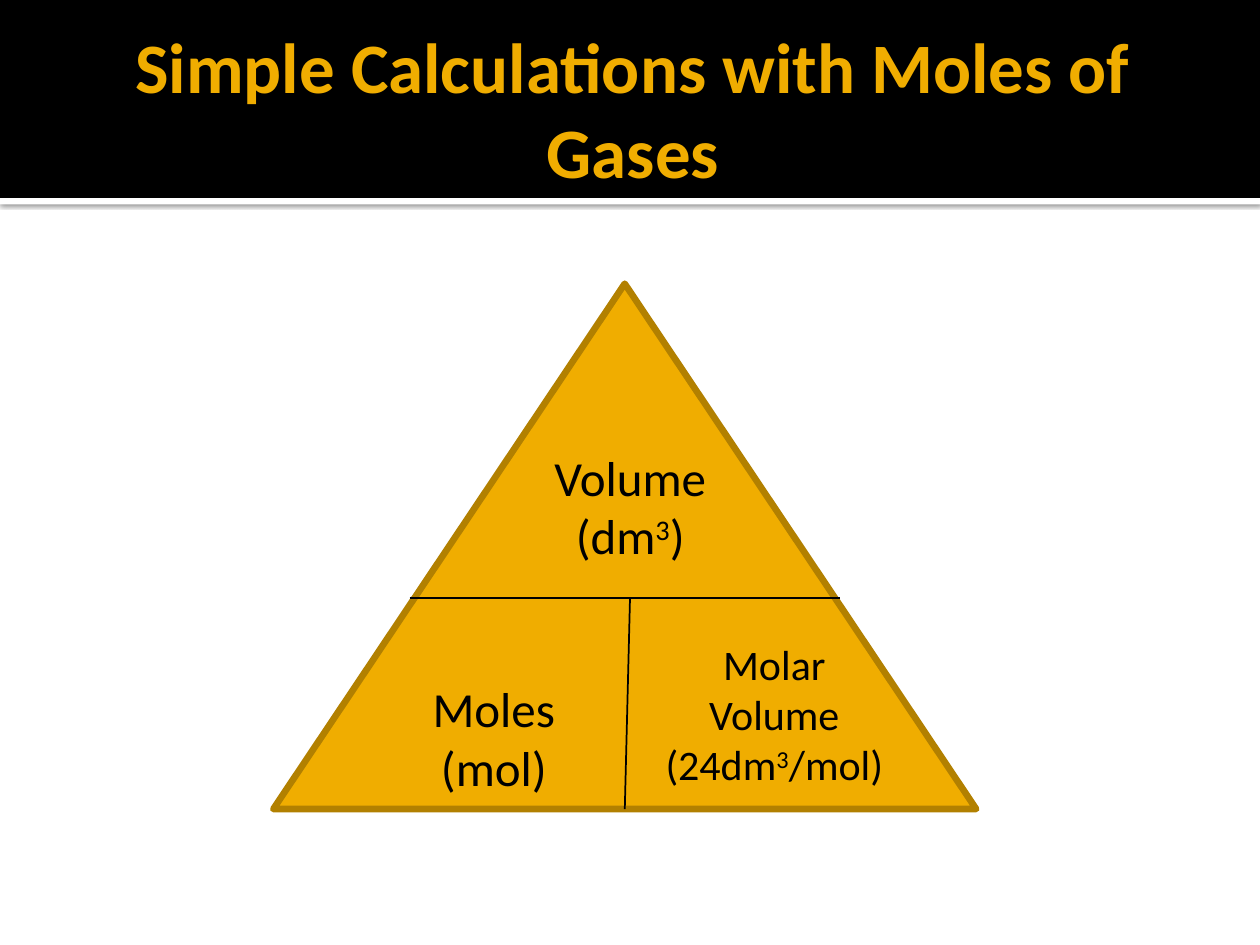
import pptx
import pptx.util
import pptx.dml.color
import pptx.enum.shapes
import pptx.enum.text
import pptx.oxml
import pptx.oxml.ns
from dataclasses import dataclass
from pptx.util import Cm


@dataclass(frozen=True)
class Theme:
    font: str = "Calibri"
    black: str = "000000"
    white: str = "FFFFFF"
    gold: str = "F0AD00"
    dark_gold: str = "B28000"
    title_size: float = 40.5
    label_size: float = 28
    small_label_size: float = 24


theme = Theme()


def color(value):
    return pptx.dml.color.RGBColor.from_string(value)


def format_paragraph(paragraph, size, font_color):
    paragraph.alignment = pptx.enum.text.PP_ALIGN.CENTER
    paragraph.font.name = theme.font
    paragraph.font.size = pptx.util.Pt(size)
    paragraph.font.color.rgb = color(font_color)


presentation = pptx.Presentation()
presentation.slide_width = Cm(25.4)
presentation.slide_height = Cm(19.05)
slide = presentation.slides.add_slide(presentation.slide_layouts[5])
shapes = slide.shapes
title = shapes.title

banner_height = 3.99
bands = []
for top, height, fill in [
    (banner_height, 0.13, theme.white),
    (0, banner_height, theme.black),
]:
    band = shapes.add_shape(
        pptx.enum.shapes.MSO_SHAPE.RECTANGLE, 0, Cm(top), presentation.slide_width, Cm(height)
    )
    band.shadow.inherit = False
    band.fill.solid()
    band.fill.fore_color.rgb = color(fill)
    band.line.fill.background()
    title.element.addprevious(band.element)
    bands.append(band)

effects = bands[0].element.spPr.find(pptx.oxml.ns.qn("a:effectLst"))
effects.append(pptx.oxml.parse_xml(
    f'<a:outerShdw {pptx.oxml.ns.nsdecls("a")} blurRad="31750" dist="10160" dir="5400000" '
    f'algn="t" rotWithShape="0"><a:srgbClr val="{theme.black}">'
    '<a:alpha val="60000"/></a:srgbClr></a:outerShdw>'
))

title.left, title.top, title.width, title.height = Cm(1.27), Cm(0.43), Cm(22.86), Cm(3.48)
frame = title.text_frame
frame.text = "Simple Calculations with Moles of Gases"
frame.word_wrap = True
frame.auto_size = pptx.enum.text.MSO_AUTO_SIZE.NONE
frame.vertical_anchor = pptx.enum.text.MSO_ANCHOR.MIDDLE
frame.margin_left = Cm(0.25)
frame.margin_right = frame.margin_top = frame.margin_bottom = Cm(0.13)
format_paragraph(frame.paragraphs[0], theme.title_size, theme.gold)
frame.paragraphs[0].font.bold = True

triangle = shapes.add_shape(
    pptx.enum.shapes.MSO_SHAPE.ISOSCELES_TRIANGLE, Cm(5.51), Cm(5.72), Cm(14.17), Cm(10.59)
)
triangle.shadow.inherit = False
triangle.fill.solid()
triangle.fill.fore_color.rgb = color(theme.gold)
triangle.line.color.rgb = color(theme.dark_gold)
triangle.line.width = pptx.util.Pt(3.78)

divider_top = Cm(12.06)
triangle_center = triangle.left + triangle.width // 2
triangle_bottom = triangle.top + triangle.height
for ends in [
    (Cm(8.26), divider_top, Cm(16.94), divider_top),
    (Cm(12.7), divider_top, triangle_center, triangle_bottom),
]:
    divider = shapes.add_connector(pptx.enum.shapes.MSO_CONNECTOR.STRAIGHT, *ends)
    divider.line.color.rgb = color(theme.black)
    divider.line.width = pptx.util.Pt(1)
    divider.element.spPr.append(
        pptx.oxml.parse_xml(f'<a:effectLst {pptx.oxml.ns.nsdecls("a")}/>')
    )

labels = [
    (10.8, 8.89, 3.81, 2.65, theme.label_size, [["Volume"], ["(dm", "3", ")"]]),
    (8.05, 13.55, 3.81, 2.65, theme.label_size, [["Moles (mol)"]]),
    (13.02, 12.74, 5.18, 3.33, theme.small_label_size, [["Molar Volume"], ["(24dm", "3", "/mol)"]]),
]
for left, top, width, height, size, lines in labels:
    label = shapes.add_textbox(Cm(left), Cm(top), Cm(width), Cm(height))
    frame = label.text_frame
    frame.word_wrap = True
    frame.auto_size = pptx.enum.text.MSO_AUTO_SIZE.SHAPE_TO_FIT_TEXT
    for index, parts in enumerate(lines):
        paragraph = frame.add_paragraph() if index else frame.paragraphs[0]
        format_paragraph(paragraph, size, theme.black)
        for part in parts:
            run = paragraph.add_run()
            run.text = part
            if part == "3":
                run.font.element.set("baseline", "30000") if hasattr(
                    run.font, "element"
                ) else run._r.get_or_add_rPr().set("baseline", "30000")

presentation.save("out.pptx")
